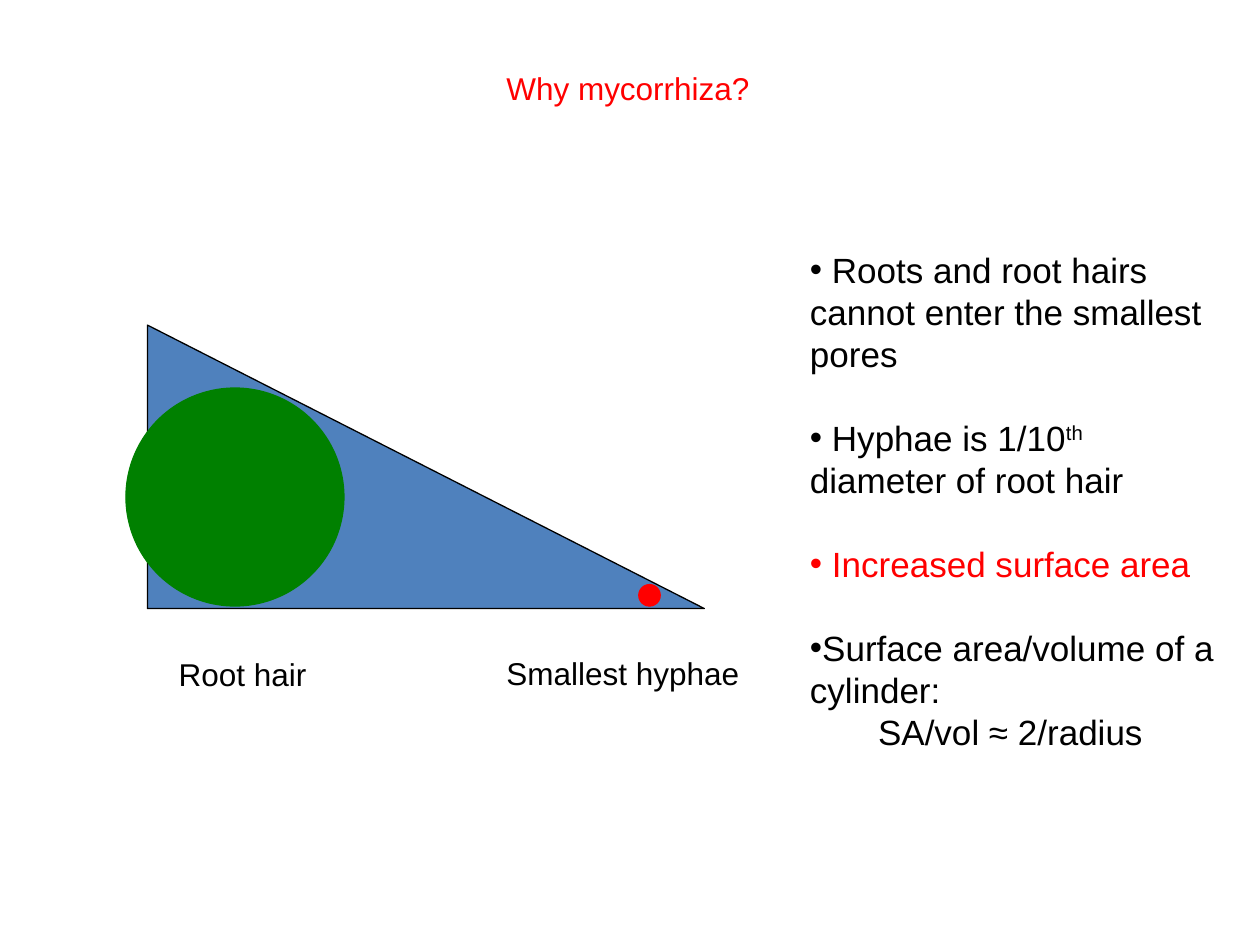
from pptx import Presentation
from pptx.dml.color import RGBColor
from pptx.enum.shapes import MSO_SHAPE
from pptx.enum.text import MSO_AUTO_SIZE
from pptx.util import Inches, Pt
from lxml.etree import SubElement
from pptx.oxml.ns import qn

# The slide is a grid of 100 columns by 75 rows
COLS, ROWS = 100, 75
CELL = Inches(10) / COLS
BLACK, RED, GREEN, BLUE = "000000", "FF0000", "008000", "4F81BD"


def grid(*cells):
    return [round(n * CELL) for n in cells]


def paint(part, hue):
    part.rgb = RGBColor.from_string(hue)


def add_run(para, text, size, hue=BLACK, raised=False):
    run = para.add_run()
    run.text = text
    run.font.name = "Arial"
    run.font.size = Pt(size)
    paint(run.font.color, hue)
    if raised:
        run.font._element.set("baseline", "30000")


def add_box(slide, cells, wrap):
    frame = slide.shapes.add_textbox(*grid(*cells)).text_frame
    frame.word_wrap = wrap
    frame.auto_size = MSO_AUTO_SIZE.SHAPE_TO_FIT_TEXT
    return frame


def add_label(slide, cells, text, hue=BLACK):
    frame = add_box(slide, cells, False)
    add_run(frame.paragraphs[0], text, 18, hue)


def add_form(slide, kind, cells, fill, edge):
    form = slide.shapes.add_shape(kind, *grid(*cells))
    form.shadow.inherit = False
    form.fill.solid()
    paint(form.fill.fore_color, fill)
    paint(form.line.color, edge)
    form.line.width = Pt(0.75)
    return form


def add_disc(slide, left, top, size, hue):
    add_form(slide, MSO_SHAPE.OVAL, (left, top, size, size), hue, hue)


def add_points(slide, cells, points, closing):
    frame = add_box(slide, cells, True)
    for i, runs in enumerate(points):
        para = frame.add_paragraph() if i else frame.paragraphs[0]
        if i:
            para.space_before = Pt(24)
        props = para._p.get_or_add_pPr()
        SubElement(props, qn("a:buFont"), typeface="Arial")
        SubElement(props, qn("a:buChar"), char="•")
        for text, *style in runs:
            add_run(para, text, 20, *style)
    # Formula, indented under the last point
    para = frame.add_paragraph()
    para._p.get_or_add_pPr().set("indent", str(Inches(0.54)))
    add_run(para, closing, 20)


def main():
    deck = Presentation()
    deck.slide_width, deck.slide_height = grid(COLS, ROWS)
    slide = deck.slides.add_slide(deck.slide_layouts[6])

    # Title
    add_label(slide, (39.2, 5, 27.8, 5), "Why mycorrhiza?", RED)

    # Narrowing pore with root hair and hypha
    pore = add_form(slide, MSO_SHAPE.ISOSCELES_TRIANGLE,
                    (11.7, 25.8, 44.2, 22.5), BLUE, BLACK)
    pore.adjustments[0] = 0
    add_disc(slide, 10, 30.8, 17.3, GREEN)
    add_disc(slide, 50.7, 46.4, 1.7, RED)
    add_label(slide, (13.2, 51.5, 12.2, 4), "Root hair")
    add_label(slide, (39.2, 51.4, 20.5, 4), "Smallest hyphae")

    # Reasons
    add_points(slide, (63.3, 19.2, 34.9, 51), [
        [(" Roots and root hairs cannot enter the smallest pores",)],
        [(" Hyphae is 1/10",), ("th", BLACK, True),
         (" diameter of root hair",)],
        [(" Increased surface area", RED)],
        [("Surface area/volume of a cylinder:",)],
    ], "SA/vol ≈ 2/radius")

    deck.save("out.pptx")


if __name__ == "__main__":
    main()
